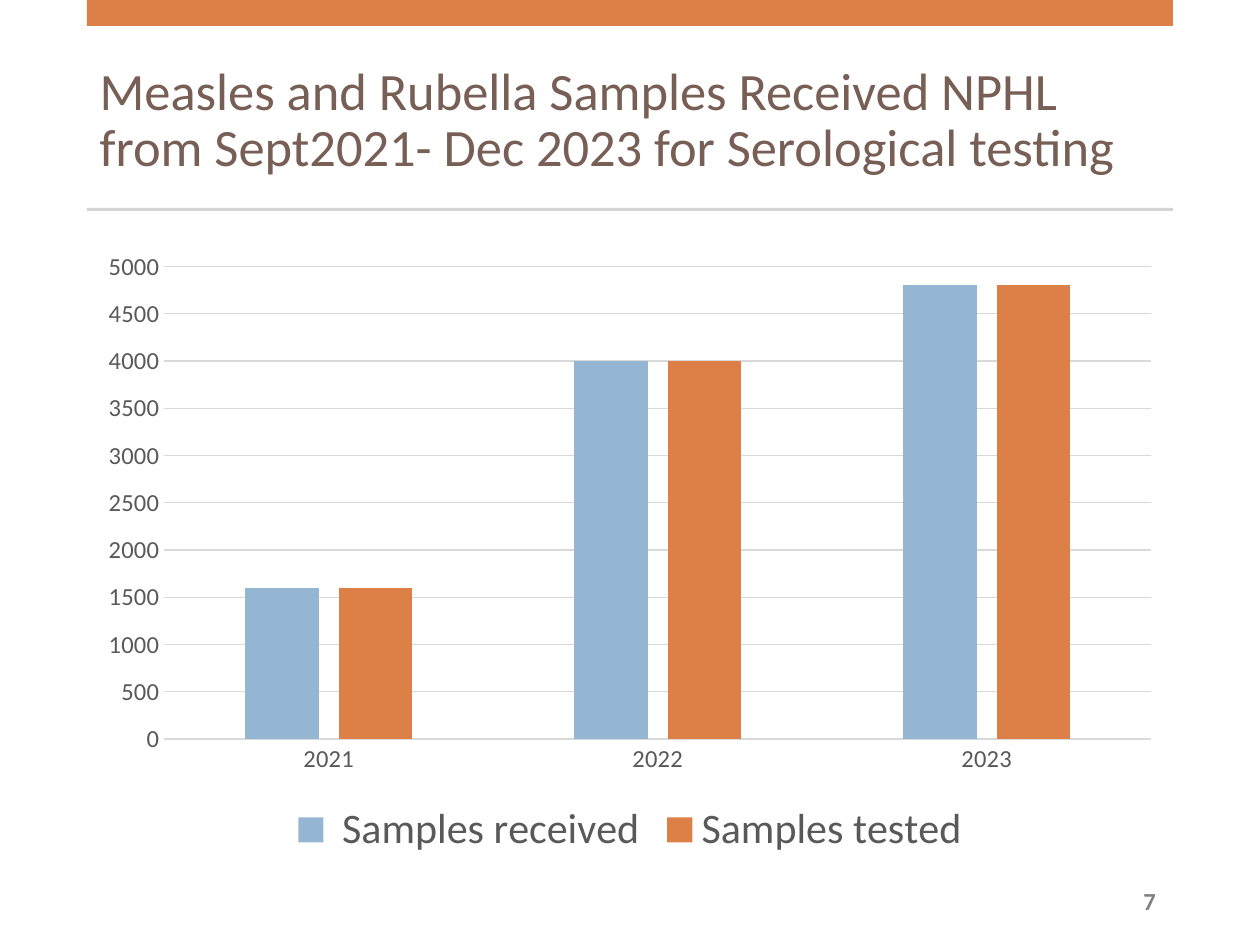
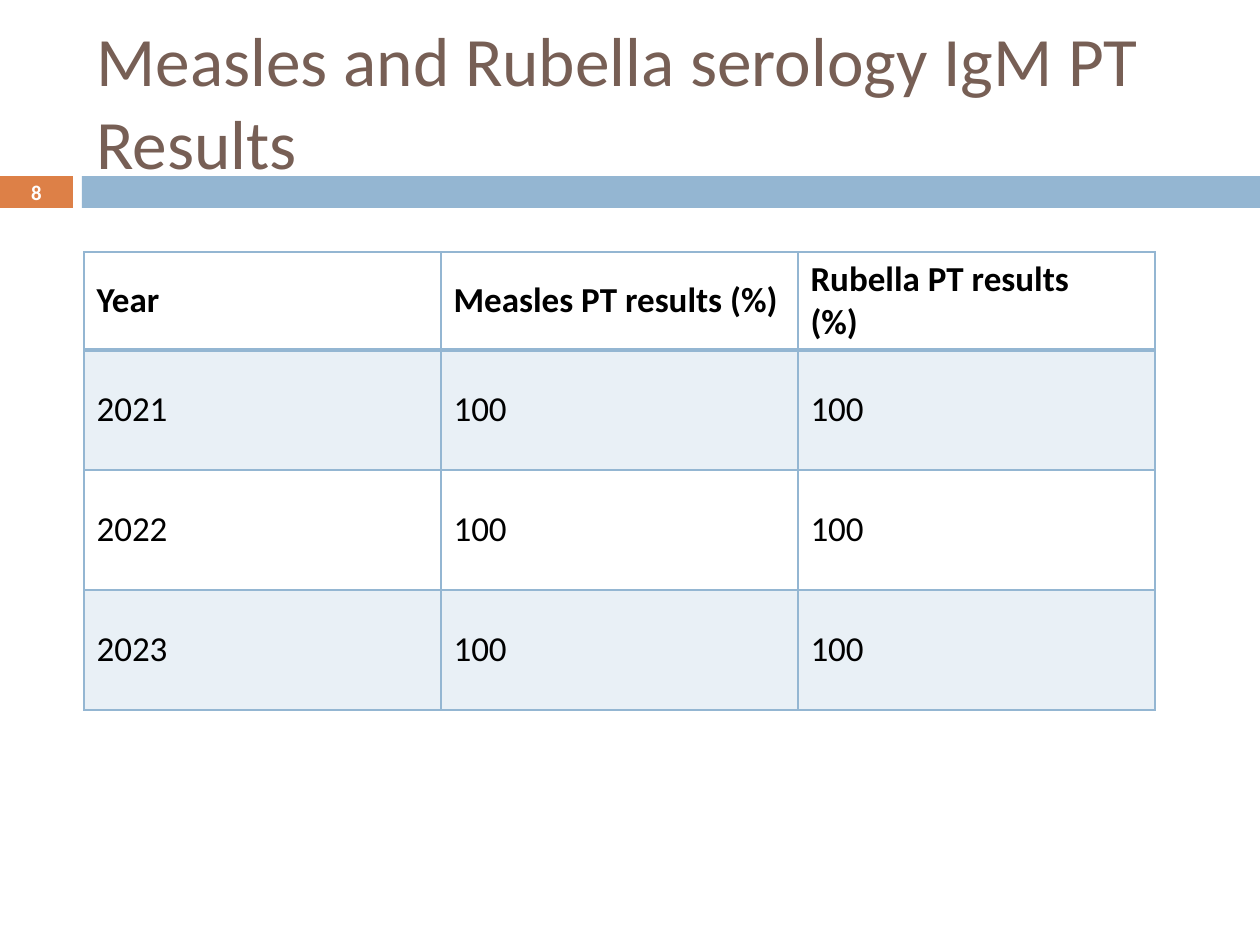
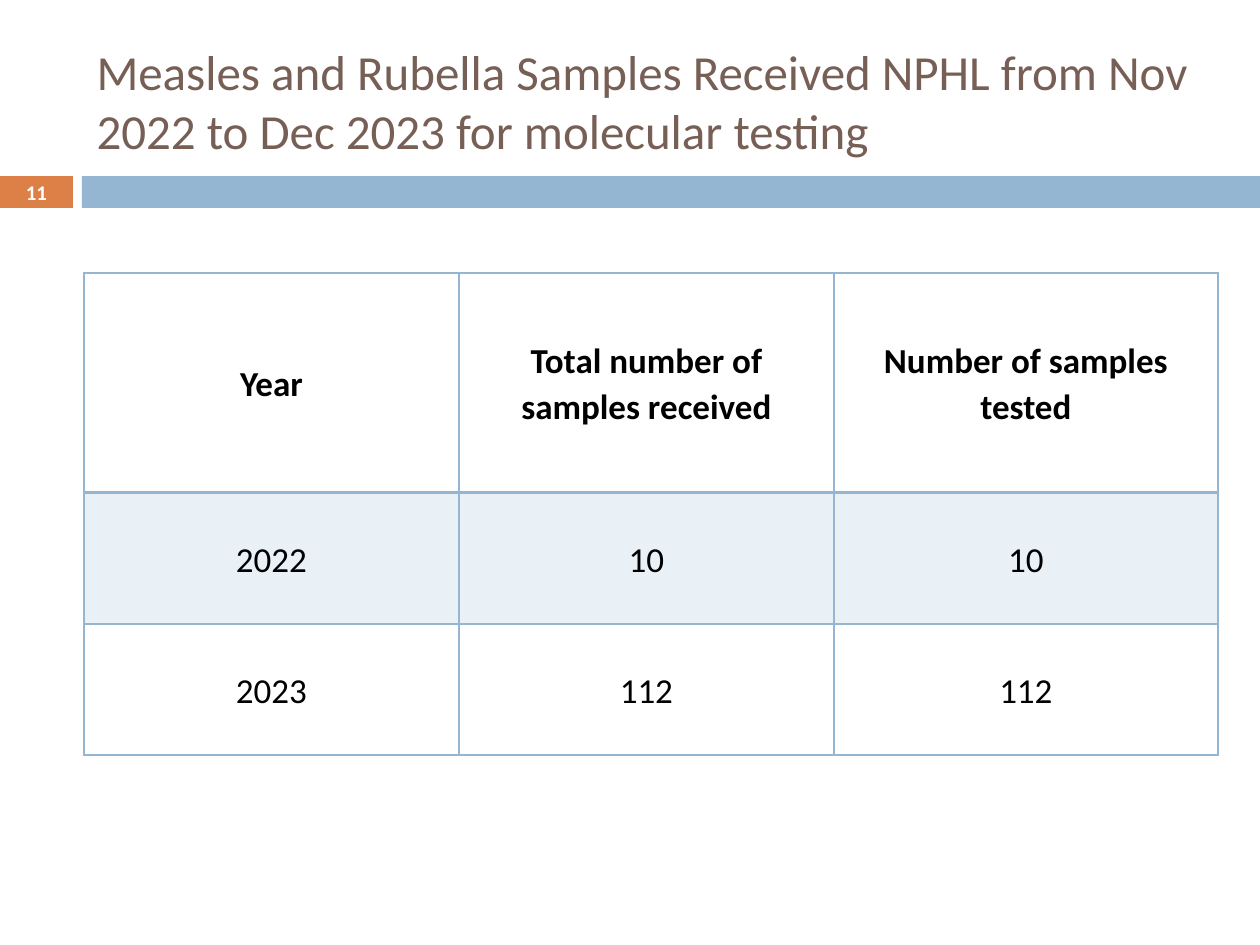
import dataclasses

import lxml.etree
import pptx
import pptx.chart.data
import pptx.dml.color
import pptx.enum.chart
import pptx.enum.shapes
import pptx.enum.text
import pptx.oxml.ns
import pptx.util

EMU_PER_PX = 914400 / 126
ALIGN = pptx.enum.text.PP_ALIGN
MIDDLE = pptx.enum.text.MSO_ANCHOR.MIDDLE
qn = pptx.oxml.ns.qn


@dataclasses.dataclass(frozen=True)
class Theme:
    font: str = "Calibri"
    title: str = "775F55"
    orange: str = "DD8047"
    blue: str = "94B6D2"
    rule: str = "D5D5D5"
    grid: str = "D9D9D9"
    label: str = "595959"
    grey: str = "808080"
    black: str = "000000"
    white: str = "FFFFFF"
    title_size: float = 30
    large_title_size: float = 39.6
    small_title_size: float = 28
    legend_size: float = 24
    table_size: float = 20
    label_size: float = 14
    badge_size: float = 11.9


def px(*lengths):
    return [pptx.util.Emu(round(n * EMU_PER_PX)) for n in lengths]


def rgb(color):
    return pptx.dml.color.RGBColor.from_string(color)


class Deck:
    def __init__(self, theme):
        self.theme = theme
        self.prs = pptx.Presentation()
        self.prs.slide_width, self.prs.slide_height = px(1260, 945)
        self.s = None

    def add_slide(self):
        self.s = self.prs.slides.add_slide(self.prs.slide_layouts[5])

    def font(self, font, size, color, bold=False):
        font.name = self.theme.font
        font.size = pptx.util.Pt(size)
        font.bold = bold
        font.color.rgb = rgb(color)

    def title(self, text, box, size, spacing=1.0):
        sp = self.s.shapes.title
        sp.left, sp.top, sp.width, sp.height = px(*box)
        tf = sp.text_frame
        tf.text = text
        tf.auto_size = pptx.enum.text.MSO_AUTO_SIZE.NONE
        tf.vertical_anchor = MIDDLE
        p = tf.paragraphs[0]
        p.alignment = ALIGN.LEFT
        p.line_spacing = spacing
        self.font(p.font, size, self.theme.title)

    def rect(self, box, color):
        sp = self.s.shapes.add_shape(pptx.enum.shapes.MSO_SHAPE.RECTANGLE, *px(*box))
        sp.shadow.inherit = False
        sp.fill.solid()
        sp.fill.fore_color.rgb = rgb(color)
        sp.line.fill.background()

    def page_number(self, number, box, size, color):
        tf = self.s.shapes.add_textbox(*px(*box)).text_frame
        tf.word_wrap = True
        tf.vertical_anchor = MIDDLE
        tf.text = str(number)
        p = tf.paragraphs[0]
        p.alignment = ALIGN.CENTER
        self.font(p.font, size, color, bold=True)

    def banded_slide(self, number, title, title_size):
        self.add_slide()
        self.rect((0, 176, 73, 32), self.theme.orange)
        self.rect((82, 176, 1178, 32), self.theme.blue)
        self.title(title, (84, 32, 1124, 136), title_size)
        self.page_number(number, (0, 175, 73, 34), self.theme.badge_size, self.theme.white)

    def cell_borders(self, cell, bottom):
        tc_pr = cell._tc.get_or_add_tcPr()
        for side, points in (("L", 1), ("R", 1), ("T", 1), ("B", bottom)):
            ln = lxml.etree.SubElement(tc_pr, qn(f"a:ln{side}"), w=str(pptx.util.Pt(points)))
            fill = lxml.etree.SubElement(ln, qn("a:solidFill"))
            lxml.etree.SubElement(fill, qn("a:srgbClr"), val=self.theme.blue)

    def tint(self, cell):
        cell.fill.solid()
        cell.fill.fore_color.rgb = rgb(self.theme.blue)
        color = cell._tc.tcPr.find(qn("a:solidFill"))[0]
        lxml.etree.SubElement(color, qn("a:alpha"), val="20000")

    def table(self, rows, left, top, widths, heights, centred=False):
        box = px(left, top, sum(widths), sum(heights))
        table = self.s.shapes.add_table(len(rows), len(widths), *box).table
        table.first_row = table.horz_banding = False
        for column, width in zip(table.columns, px(*widths)):
            column.width = width
        for row, height in zip(table.rows, px(*heights)):
            row.height = height
        for i, values in enumerate(rows):
            for j, value in enumerate(values):
                cell = table.cell(i, j)
                cell.text = value
                cell.vertical_anchor = MIDDLE
                for p in cell.text_frame.paragraphs:
                    self.font(p.font, self.theme.table_size, self.theme.black, bold=i == 0)
                    if centred:
                        p.alignment = ALIGN.CENTER
                        p.line_spacing = 1.07
                        p.space_after = pptx.util.Pt(8)
                if centred and i:
                    cell.margin_left, cell.margin_right = px(9, 9)
                    cell.margin_top, cell.margin_bottom = px(1, 0)
                self.cell_borders(cell, bottom=1 if i else 2)
                if i % 2:
                    self.tint(cell)
                else:
                    cell.fill.background()

    def column_chart(self, box, categories, series, top_value, step):
        data = pptx.chart.data.CategoryChartData()
        data.categories = categories
        for name, values, _ in series:
            data.add_series(name, values)
        kind = pptx.enum.chart.XL_CHART_TYPE.COLUMN_CLUSTERED
        chart = self.s.shapes.add_chart(kind, *px(*box), data).chart
        self.font(chart.font, self.theme.label_size, self.theme.black)
        chart.has_title = False
        chart.has_legend = True
        chart.legend.position = pptx.enum.chart.XL_LEGEND_POSITION.BOTTOM
        chart.legend.include_in_layout = False
        self.font(chart.legend.font, self.theme.legend_size, self.theme.label)
        plot = chart.plots[0]
        plot.gap_width = 219
        plot.overlap = -27
        plot.vary_by_categories = False
        for bars, (_, _, color) in zip(plot.series, series):
            bars.format.fill.solid()
            bars.format.fill.fore_color.rgb = rgb(color)
        for axis in (chart.category_axis, chart.value_axis):
            axis.major_tick_mark = axis.minor_tick_mark = pptx.enum.chart.XL_TICK_MARK.NONE
            self.font(axis.tick_labels.font, self.theme.label_size, self.theme.label)
        axis = chart.value_axis
        axis.minimum_scale = 0
        axis.maximum_scale = top_value
        axis.major_unit = step
        axis.format.line.fill.background()
        for line in (chart.category_axis.format.line, axis.major_gridlines.format.line):
            line.color.rgb = rgb(self.theme.grid)
            line.width = pptx.util.Pt(0.75)


def serology_samples(deck):
    theme = deck.theme
    deck.add_slide()
    deck.title(
        "Measles and Rubella Samples Received NPHL from Sept2021- Dec 2023 for Serological testing",
        (87, 47, 1086, 149), theme.title_size, spacing=0.9)
    deck.rect((87, 0, 1086, 26), theme.orange)
    deck.rect((87, 208, 1086, 3), theme.rule)
    deck.page_number(7, (1102, 876, 95, 50), theme.label_size, theme.grey)
    samples = (1600, 4000, 4800)
    deck.column_chart(
        (87, 239, 1086, 625), ("2021", "2022", "2023"),
        ((" Samples received", samples, theme.blue), ("Samples tested", samples, theme.orange)),
        top_value=5000, step=500)


def proficiency_results(deck):
    deck.banded_slide(8, "Measles and Rubella serology IgM PT Results", deck.theme.large_title_size)
    rows = [("Year", "Measles PT results (%)", "Rubella PT results\n(%)")]
    rows += [(year, "100", "100") for year in ("2021", "2022", "2023")]
    deck.table(rows, 84, 252, [357] * 3, [98] + [120] * 3)


def molecular_samples(deck):
    deck.banded_slide(
        11, "Measles and Rubella Samples Received NPHL from Nov 2022 to Dec 2023 for molecular testing",
        deck.theme.small_title_size)
    rows = [
        ("Year", "Total number of samples received", "Number of samples tested"),
        ("2022", "10", "10"),
        ("2023", "112", "112"),
    ]
    deck.table(rows, 84, 273, [375, 375, 384], [220, 131, 131], centred=True)


def main():
    deck = Deck(Theme())
    serology_samples(deck)
    proficiency_results(deck)
    molecular_samples(deck)
    deck.prs.save("out.pptx")


if __name__ == "__main__":
    main()
